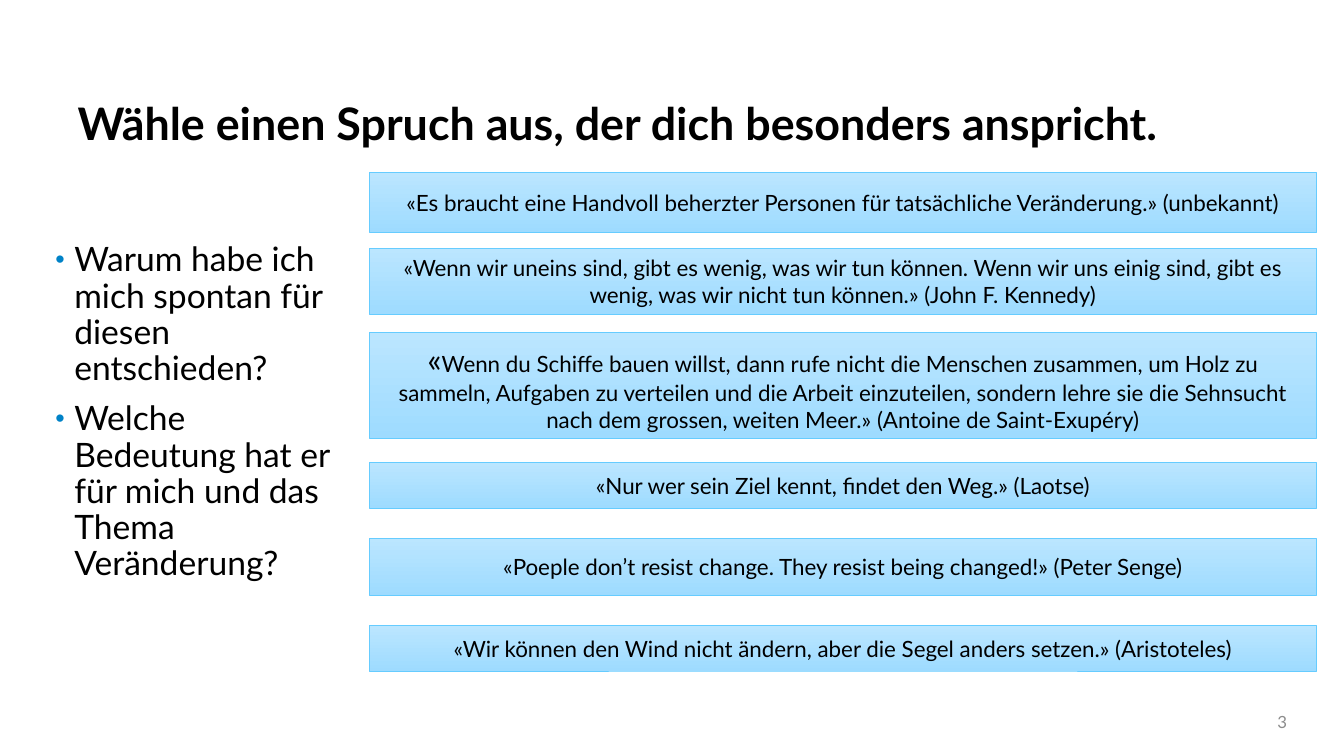
"""Build the slide with six quotes on change and two questions about them."""
from dataclasses import dataclass

from lxml import etree
from pptx import Presentation
from pptx.dml.color import RGBColor
from pptx.enum.shapes import MSO_SHAPE
from pptx.enum.text import MSO_ANCHOR, MSO_AUTO_SIZE, PP_ALIGN
from pptx.oxml.ns import qn
from pptx.util import Cm, Pt

RECT = MSO_SHAPE.RECTANGLE
TOP, MIDDLE = MSO_ANCHOR.TOP, MSO_ANCHOR.MIDDLE
LEFT, CENTER, RIGHT = PP_ALIGN.LEFT, PP_ALIGN.CENTER, PP_ALIGN.RIGHT
NO_FIT = MSO_AUTO_SIZE.NONE

SLIDE_NUMBER = 3
TITLE = "Wähle einen Spruch aus, der dich besonders anspricht."
QUESTIONS = [
    "Warum habe ich mich spontan für diesen entschieden?",
    "Welche Bedeutung hat er für mich und das Thema Veränderung?",
]
QUOTE_LEFT, QUOTE_WIDTH = 9.32, 23.85
QUOTES = [
    (4.34, 1.52, ["«Es braucht eine Handvoll beherzter Personen für tatsächliche "
                  "Veränderung.» (unbekannt)"]),
    (6.25, 1.68, ["«Wenn wir uneins sind, gibt es wenig, was wir tun können. Wenn wir uns "
                  "einig sind, gibt es wenig, was wir nicht tun können.» (John F. Kennedy)"]),
    (8.38, 2.67, ["«", "Wenn du Schiffe bauen willst, dann rufe nicht die Menschen zusammen, "
                  "um Holz zu sammeln, Aufgaben zu verteilen und die Arbeit einzuteilen, "
                  "sondern lehre sie die Sehnsucht nach dem grossen, weiten Meer.» "
                  "(Antoine de Saint-Exupéry)"]),
    (11.66, 1.14, ["«Nur wer sein Ziel kennt, findet den Weg.» (Laotse)"]),
    (13.56, 1.45, ["«Poeple don’t resist change. They resist being changed!» (Peter Senge)"]),
    (15.77, 1.14, ["«Wir können den Wind nicht ändern, aber die Segel anders setzen.» "
                   "(Aristoteles)"]),
]


@dataclass(frozen=True)
class Theme:
    """Colours, font and type sizes of the slide."""
    font: str = "Lato"
    text: str = "000000"
    muted: str = "8C8C8C"
    bullet: str = "0082C7"
    border: str = "66CCFF"
    gradient: tuple = ("BBE6FF", "9EDBFF")
    title_size: int = 32
    body_size: int = 24
    quote_size: int = 16
    number_size: int = 12


class SlideBuilder:
    """Draws the elements of one slide in one theme."""

    def __init__(self, s, theme):
        """Keep the slide and its theme."""
        self.s, self.theme = s, theme

    def place(self, sp, left, top, width, height, anchor):
        """Position a shape and return its prepared text frame."""
        sp.left, sp.top, sp.width, sp.height = Cm(left), Cm(top), Cm(width), Cm(height)
        tf = sp.text_frame
        tf.word_wrap = True
        tf.auto_size = NO_FIT
        tf.vertical_anchor = anchor
        return tf

    def style(self, font, size, color, bold=False):
        """Apply the theme font with a size and colour."""
        font.name, font.size, font.bold = self.theme.font, Pt(size), bold
        font.color.rgb = RGBColor.from_string(color)

    def title(self, text, *box):
        """Fill the title placeholder."""
        tf = self.place(self.s.shapes.title, *box, TOP)
        tf.text = text
        p = tf.paragraphs[0]
        p.alignment, p.line_spacing = LEFT, 0.9
        self.style(p.runs[0].font, self.theme.title_size, self.theme.text, True)

    def bullets(self, items, *box):
        """Fill the body placeholder with a bulleted list."""
        tf = self.place(self.s.placeholders[1], *box, TOP)
        tf.text = "\n".join(items)
        for i, p in enumerate(tf.paragraphs):
            p.line_spacing = 0.9
            p.space_before = Pt(10 if i else 0)
            self.bullet(p)
            self.style(p.runs[0].font, self.theme.body_size, self.theme.text)

    def bullet(self, p):
        """Give a paragraph a hanging coloured bullet."""
        pPr = p._p.get_or_add_pPr()
        pPr.set("marL", str(Cm(0.48)))
        pPr.set("indent", str(-Cm(0.48)))
        color = etree.SubElement(pPr, qn("a:buClr"))
        etree.SubElement(color, qn("a:srgbClr"), val=self.theme.bullet)
        etree.SubElement(pPr, qn("a:buSzPct"), val="80000")
        etree.SubElement(pPr, qn("a:buFont"), typeface="Arial")
        etree.SubElement(pPr, qn("a:buChar"), char="•")

    def quote(self, parts, *box):
        """Add a gradient box with a quote, a lone opening mark being larger."""
        sp = self.s.shapes.add_shape(RECT, 0, 0, 0, 0)
        sp.shadow.inherit = False
        sp.fill.gradient()
        sp.fill.gradient_angle = 270
        for stop, color in zip(sp.fill.gradient_stops, self.theme.gradient):
            stop.color.rgb = RGBColor.from_string(color)
            stop.position = self.theme.gradient.index(color)
        sp.line.color.rgb = RGBColor.from_string(self.theme.border)
        sp.line.width = Pt(0.5)
        p = self.place(sp, *box, MIDDLE).paragraphs[0]
        p.alignment = CENTER
        for part in parts:
            r = p.add_run()
            r.text = part
            size = self.theme.body_size if part == "«" else self.theme.quote_size
            self.style(r.font, size, self.theme.text)

    def number(self, value, *box):
        """Add the slide number as a live field."""
        sp = self.s.shapes.add_textbox(0, 0, 0, 0)
        p = self.place(sp, *box, MIDDLE).paragraphs[0]
        p.alignment = RIGHT
        r = p.add_run()
        r.text = str(value)
        self.style(r.font, self.theme.number_size, self.theme.muted)
        field = etree.SubElement(p._p, qn("a:fld"), type="slidenum",
                                 id="{B6F15528-21DE-4FAA-801E-634DDDAF4B2B}")
        field.extend(list(r._r))
        p._p.remove(r._r)


def main():
    """Build and save the presentation."""
    prs = Presentation()
    prs.slide_width, prs.slide_height = Cm(33.87), Cm(19.05)
    prs.element.set("firstSlideNum", str(SLIDE_NUMBER))
    slide = SlideBuilder(prs.slides.add_slide(prs.slide_layouts[1]), Theme())
    slide.title(TITLE, 1.7, 2.44, 30.99, 2.79)
    slide.bullets(QUESTIONS, 1.14, 5.99, 7.77, 10.59)
    for top, height, parts in QUOTES:
        slide.quote(parts, QUOTE_LEFT, top, QUOTE_WIDTH, height)
    slide.number(SLIDE_NUMBER, 28.7, 17.7, 3.99, 0.99)
    prs.save("out.pptx")


if __name__ == "__main__":
    main()
